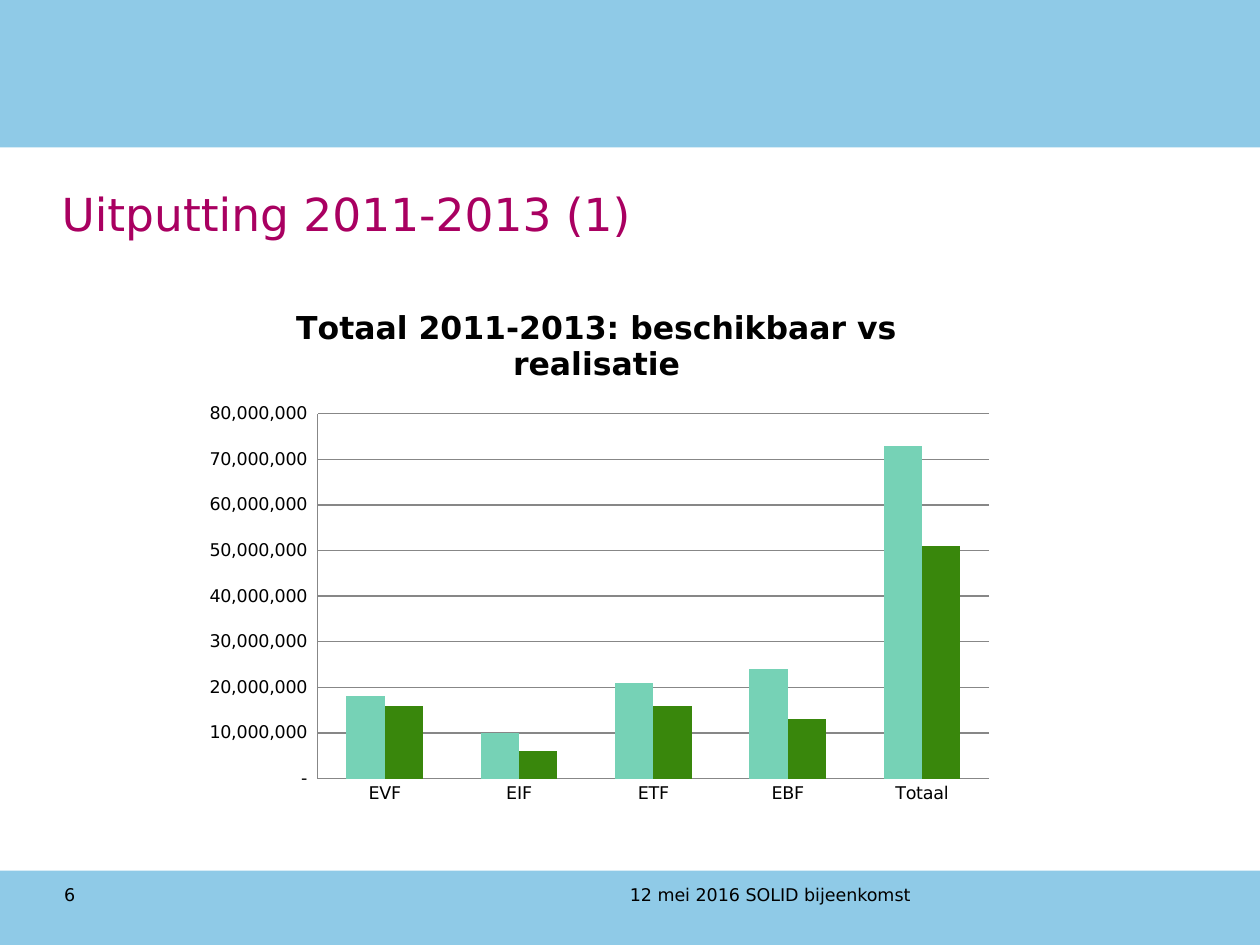
from pptx import Presentation
from pptx.chart.data import CategoryChartData as Data
from pptx.dml.color import RGBColor as RGB
from pptx.enum.chart import XL_CHART_TYPE as Kind, XL_TICK_MARK as Tick
from pptx.enum.shapes import MSO_SHAPE as Shape
from pptx.enum.text import MSO_ANCHOR as Anchor
from pptx.util import Inches, Pt

# Content
WIDE, HIGH = 10, 7.5
FONT, BLACK, GREY = "DejaVu Sans", "000000", "878787"
BANDS = [(0, 1.17), (6.91, 0.59)]  # top, height
TEXTS = [  # text, box, size, colour, anchor
    ("12 mei 2016 SOLID bijeenkomst", (4.9, 6.97, 4.55, 0.39), 10, BLACK, Anchor.TOP),
    ("6", (0.41, 6.97, 0.78, 0.39), 10, BLACK, Anchor.TOP),
    ("Uitputting 2011-2013 (1)", (0.39, 1.38, 9, 0.62), 26, "A90061", Anchor.MIDDLE),
]
HEAD = "Totaal 2011-2013: beschikbaar vs realisatie"
CATS = ["EVF", "EIF", "ETF", "EBF", "Totaal"]
SERIES = [  # name, millions, colour
    ("Series 1", [18, 10, 21, 24, 73], "76D2B6"),
    ("Series 2", [16, 6, 16, 13, 51], "39870C"),
]
FORMAT = '_(* #,##0_);_(* \\(#,##0\\);_(* "-"_);_(@_)'


def paint(hue):
    return RGB.from_string(hue)


def place(box):
    return [Inches(n) for n in box]


def style(font, size, hue=BLACK, bold=False):
    look = {"name": FONT, "size": Pt(size), "bold": bold}
    for key, val in look.items():
        setattr(font, key, val)
    font.color.rgb = paint(hue)


deck = Presentation()
deck.slide_width, deck.slide_height = Inches(WIDE), Inches(HIGH)
slide = deck.slides.add_slide(deck.slide_layouts[6])

# Bands
for top, tall in BANDS:
    band = slide.shapes.add_shape(Shape.RECTANGLE, *place((0, top, WIDE, tall)))
    band.shadow.inherit = False
    band.fill.solid()
    band.fill.fore_color.rgb = paint("8FCAE7")
    band.line.fill.background()

# Title, footer and page number
for text, box, size, hue, anchor in TEXTS:
    frame = slide.shapes.add_textbox(*place(box)).text_frame
    frame.word_wrap = True
    frame.vertical_anchor = anchor
    run = frame.paragraphs[0].add_run()
    run.text = text
    style(run.font, size, hue)

# Chart
data = Data()
data.categories = CATS
for name, vals, _ in SERIES:
    data.add_series(name, [v * 1_000_000 for v in vals])
chart = slide.shapes.add_chart(
    Kind.COLUMN_CLUSTERED, *place((1.49, 2.25, 6.49, 4.21)), data).chart
style(chart.font, 10)
chart.has_legend = False
chart.has_title = True
para = chart.chart_title.text_frame.paragraphs[0]
run = para.add_run()
run.text = HEAD
style(run.font, 18, bold=True)

plot = chart.plots[0]
plot.gap_width, plot.overlap = 150, 0
plot.vary_by_categories = False
for bars, (_, _, hue) in zip(plot.series, SERIES):
    bars.format.fill.solid()
    bars.format.fill.fore_color.rgb = paint(hue)

# Axes
cat, val = chart.category_axis, chart.value_axis
val.has_major_gridlines = True
val.minimum_scale, val.maximum_scale, val.major_unit = 0, 80_000_000, 10_000_000
val.tick_labels.number_format = FORMAT
val.tick_labels.number_format_is_linked = False
for axis in (cat, val):
    axis.major_tick_mark = axis.minor_tick_mark = Tick.NONE
for part in (cat, val, val.major_gridlines):
    part.format.line.color.rgb = paint(GREY)
    part.format.line.width = Pt(0.75)

deck.save("out.pptx")
